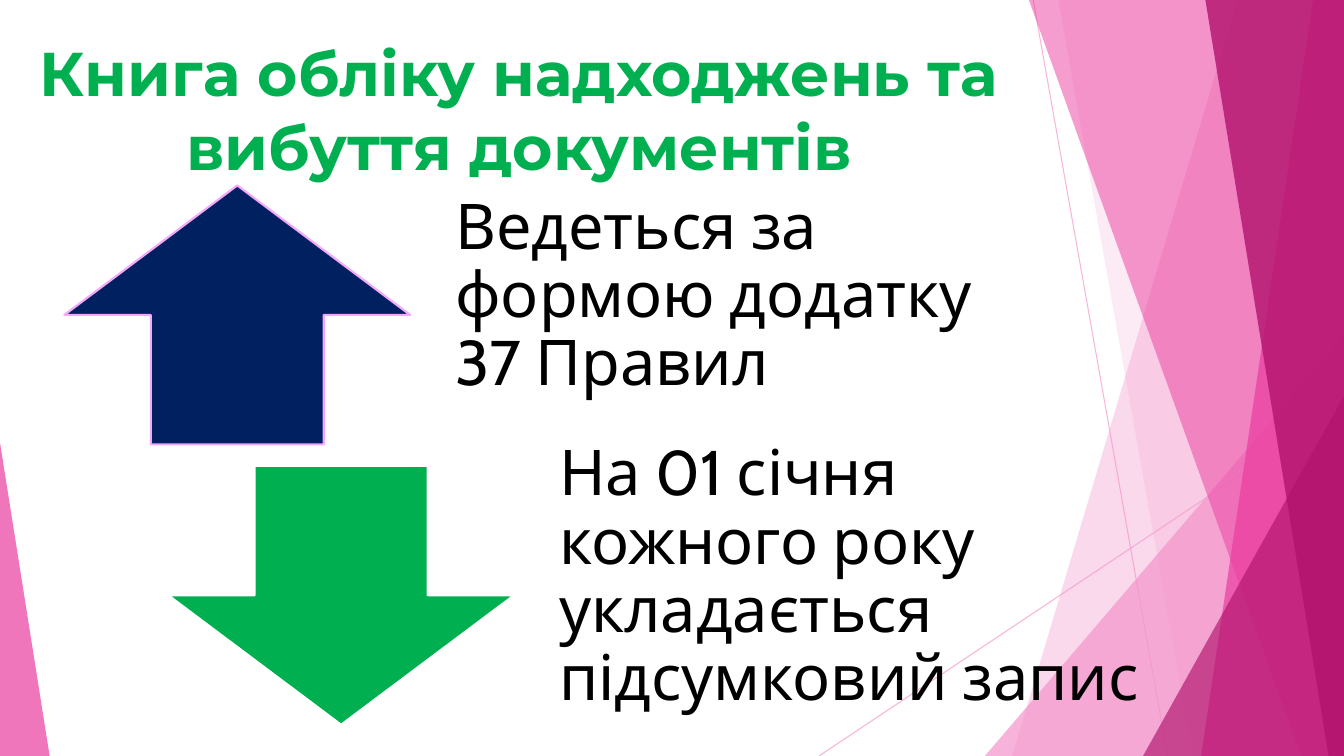
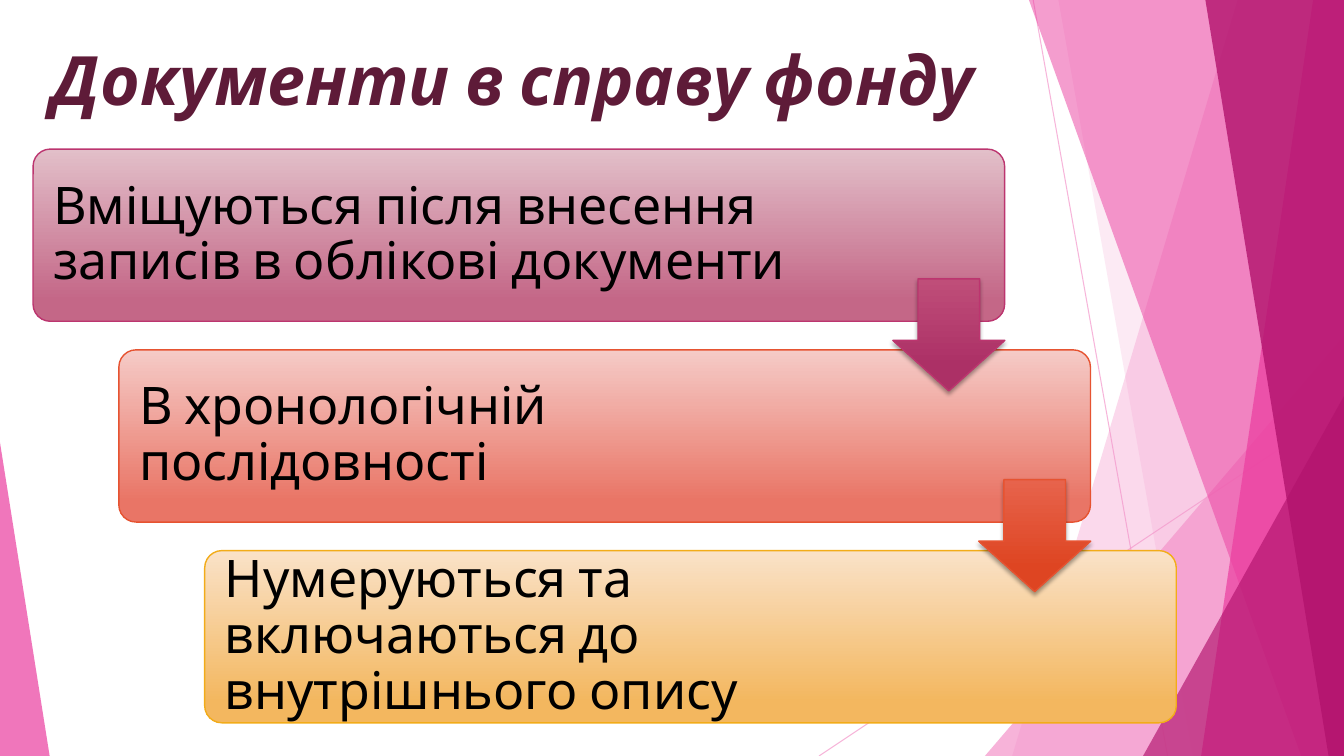
import pptx
import pptx.util
import pptx.dml.color
import pptx.enum.dml
import pptx.enum.shapes
import pptx.enum.text
import pptx.oxml.ns
from lxml import etree

Pt = pptx.util.Pt
RGB = pptx.dml.color.RGBColor
Kind = pptx.enum.shapes.MSO_SHAPE
Align = pptx.enum.text.PP_ALIGN
Anchor = pptx.enum.text.MSO_ANCHOR
qn = pptx.oxml.ns.qn

# Colours
BLACK = RGB(0x00, 0x00, 0x00)
WHITE = RGB(0xFF, 0xFF, 0xFF)
NAVY = RGB(0x00, 0x20, 0x60)
GREEN = RGB(0x00, 0xB0, 0x50)
LILAC = RGB(0xF5, 0xA7, 0xFB)
WINE = RGB(0x5E, 0x1B, 0x38)
PALE = RGB(0xF4, 0x96, 0xCB)
PINK = RGB(0xEB, 0x3D, 0x9F)
DEEP = RGB(0xB2, 0x13, 0x6D)
ROSE = RGB(0xBC, 0x35, 0x6F)
CORAL = RGB(0xE6, 0x53, 0x31)
AMBER = RGB(0xF2, 0xAC, 0x19)
ROSE_CARD = (RGB(0xE2, 0xBF, 0xC9), RGB(0xC4, 0x67, 0x87))
CORAL_CARD = (RGB(0xF5, 0xCB, 0xC7), RGB(0xE9, 0x75, 0x66))
AMBER_CARD = (RGB(0xFA, 0xE2, 0xC8), RGB(0xF3, 0xB7, 0x5F))
ROSE_ARROW = (RGB(0xBF, 0x4E, 0x79), RGB(0xAC, 0x30, 0x66))
CORAL_ARROW = (RGB(0xE7, 0x63, 0x4C), RGB(0xDE, 0x45, 0x22))

WIDE, HIGH = 960, 540
FONT = "Cabin"

# Backdrop, from back to front
RAYS = [(738, 0, 834, 540), (960, 290, 585, 540)]
PANES = [
    ("slant", (884, 723), PALE, 36),
    ("slant", (756, 852), PALE, 20),
    ("wedge", (703.5, 240, 256.5, 300, 1), PALE, 72),
    ("slant", (735, 929.5), PINK, 50),
    ("slant", (938, 858), PINK, 70),
    ("slant", (861, 949), DEEP, 80),
    ("wedge", (816.5, 283, 143.5, 257, 1), DEEP, 66),
    ("wedge", (0, 316, 35.5, 224, 0), PINK, 70),
]


def fade(shape, share):
    """Make the shape's colour opaque by the given percentage."""
    for tint in shape.element.spPr.iter(qn("a:srgbClr")):
        etree.SubElement(tint, qn("a:alpha")).set("val", str(share * 1000))


def paint(shape, fill, line=None, width=1):
    """Apply a plain fill and an optional outline, with no shadow."""
    shape.shadow.inherit = False
    shape.fill.solid()
    shape.fill.fore_color.rgb = fill
    edge(shape, line, width)


def edge(shape, line, width):
    if line is None:
        shape.line.fill.background()
    else:
        shape.line.color.rgb = line
        shape.line.width = Pt(width)


def blend(shape, tones, stop, line):
    """Apply a gradient from top to bottom that ends at the given stop."""
    shape.shadow.inherit = False
    shape.fill.gradient()
    shape.fill.gradient_angle = 270
    for mark, tone, place in zip(shape.fill.gradient_stops, tones, (0, stop)):
        mark.color.rgb = tone
        mark.position = place
    edge(shape, line, 1)


def shade(shape):
    """Drop a soft shadow straight down."""
    effects = shape.element.spPr.find(qn("a:effectLst"))
    drop = etree.SubElement(effects, qn("a:outerShdw"), blurRad=str(Pt(3)),
                            dist=str(Pt(2)), dir="5400000", rotWithShape="0")
    tint = etree.SubElement(drop, qn("a:srgbClr"), val=str(BLACK))
    etree.SubElement(tint, qn("a:alpha"), val="35000")


def add(slide, kind, x, y, w, h, *bends):
    shape = slide.shapes.add_shape(kind, Pt(x), Pt(y), Pt(w), Pt(h))
    for spot, bend in enumerate(bends):
        shape.adjustments[spot] = bend
    return shape


def slant(slide, top, foot):
    """Draw a pane from a sloping left edge to the slide's right edge."""
    pen = slide.shapes.build_freeform(Pt(top), 0)
    pen.add_line_segments([(Pt(WIDE), 0), (Pt(WIDE), Pt(HIGH)),
                           (Pt(foot), Pt(HIGH))], close=True)
    return pen.convert_to_shape()


def ray(slide, x1, y1, x2, y2):
    line = slide.shapes.add_connector(
        pptx.enum.shapes.MSO_CONNECTOR.STRAIGHT, Pt(x1), Pt(y1), Pt(x2), Pt(y2))
    line.line.color.rgb = PALE
    line.line.width = Pt(0.75)
    etree.SubElement(line.element.spPr, qn("a:effectLst"))
    fade(line, 70)
    return line


def backdrop(slide, layout):
    """Draw the panes and move them to the layout that all slides share."""
    parts = [ray(slide, *ends) for ends in RAYS]
    for form, size, tone, share in PANES:
        if form == "slant":
            pane = slant(slide, *size)
        else:
            pane = add(slide, Kind.ISOSCELES_TRIANGLE, *size)
        paint(pane, tone)
        fade(pane, share)
        parts.append(pane)
    for count, part in enumerate(parts, 100):
        part.element[0][0].set("id", str(count))
        layout.shapes.element.append(part.element)


def style(frame, size, tone, font=FONT):
    for run in frame.paragraphs[0].runs:
        run.font.size = Pt(size)
        run.font.name = font
        run.font.color.rgb = tone


def title(slide, text, box, size, tone, align, anchor, font=FONT):
    head = slide.shapes.title
    head.left, head.top, head.width, head.height = map(Pt, box)
    frame = head.text_frame
    frame.text = text
    frame.auto_size = pptx.enum.text.MSO_AUTO_SIZE.NONE
    frame.vertical_anchor = anchor
    frame.paragraphs[0].alignment = align
    style(frame, size, tone, font)
    run = frame.paragraphs[0].runs[0]
    run.font.bold = True
    return run


def outline(run, tone, width):
    """Give the letters an outline."""
    line = etree.Element(qn("a:ln"), w=str(Pt(width)))
    fill = etree.SubElement(line, qn("a:solidFill"))
    etree.SubElement(fill, qn("a:srgbClr"), val=str(tone))
    run.font._element.insert(0, line)


def label(slide, text, x, y, w, h, size, inset, top):
    box = slide.shapes.add_textbox(Pt(x), Pt(y), Pt(w), Pt(h))
    frame = box.text_frame
    frame.word_wrap = True
    frame.vertical_anchor = Anchor.MIDDLE
    frame.margin_left = frame.margin_right = frame.margin_bottom = Pt(inset)
    frame.margin_top = Pt(top)
    frame.text = text
    frame.paragraphs[0].line_spacing = 0.9
    style(frame, size, BLACK)


def ledger(slide):
    """Slide 1: two large arrows with a statement beside each."""
    run = title(slide, "Книга обліку надходжень та вибуття документів",
                (16.5, 21.5, 709, 85), 44.1, GREEN, Align.CENTER, Anchor.TOP,
                "Montserrat")
    outline(run, NAVY, 1.42)
    rows = [
        (Kind.UP_ARROW, NAVY, LILAC, "Ведеться за формою додатку 37 Правил"),
        (Kind.DOWN_ARROW, GREEN, WHITE,
         "На 01 січня кожного року укладається підсумковий запис"),
    ]
    for row, (kind, fill, line, text) in enumerate(rows):
        x, y = 46 + 74.2 * row, 132.5 + 200.2 * row
        paint(add(slide, kind, x, y, 247, 185), fill, line, 1.5)
        label(slide, text, x + 254, y, 470, 185, 45, 25.2, 0)


def steps(slide):
    """Slide 2: a staircase of cards joined by small arrows."""
    run = title(slide, "Документи в справу фонду", (29.5, 23, 727, 66),
                48.6, WINE, Align.LEFT, Anchor.MIDDLE)
    run.font.italic = True
    cards = [
        (ROSE_CARD, ROSE, "Вміщуються після внесення записів в облікові документи"),
        (CORAL_CARD, CORAL, "В хронологічній послідовності"),
        (AMBER_CARD, AMBER, "Нумеруються та включаються до внутрішнього опису"),
    ]
    across, down = 61.3, 143.4
    for row, (tones, line, text) in enumerate(cards):
        x, y = 23.6 + across * row, 106.5 + down * row
        card = add(slide, Kind.ROUNDED_RECTANGLE, x, y, 694, 123, 0.1)
        blend(card, tones, 0.88, line)
        label(slide, text, x + 3.6, y + 3.6, 550, 115.8, 37, 10.8, 10.8)
    for row, (tones, line) in enumerate([(ROSE_ARROW, ROSE), (CORAL_ARROW, CORAL)]):
        arrow = add(slide, Kind.DOWN_ARROW, 637.8 + across * row,
                    199.2 + down * row, 80, 80, 0.55, 0.45)
        blend(arrow, tones, 0.78, line)
        shade(arrow)


def main():
    deck = pptx.Presentation()
    deck.slide_width, deck.slide_height = Pt(WIDE), Pt(HIGH)
    layout = deck.slide_layouts.get_by_name("Title Only")
    first, second = [deck.slides.add_slide(layout) for _ in range(2)]
    backdrop(first, layout)
    ledger(first)
    steps(second)
    deck.save("out.pptx")


if __name__ == "__main__":
    main()
